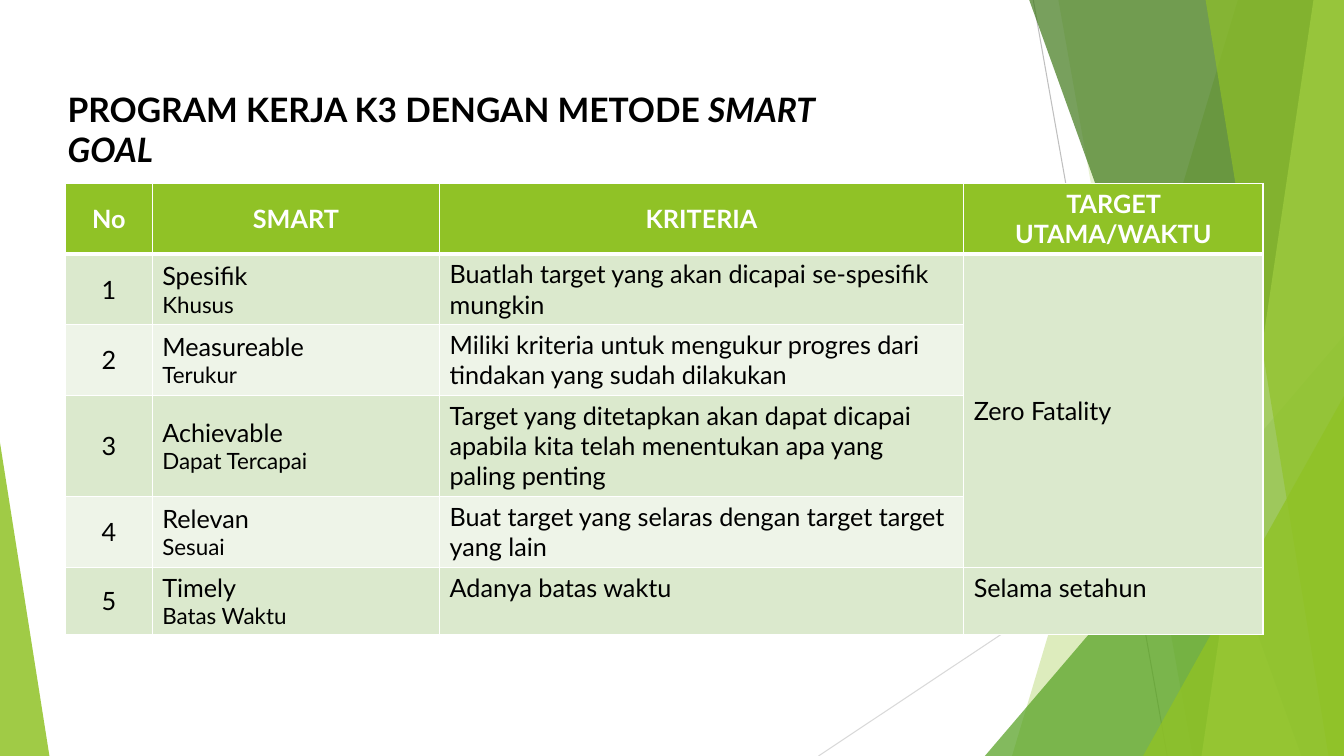
import dataclasses

import pptx
import pptx.dml.color
import pptx.enum.shapes
import pptx.enum.text
import pptx.oxml
import pptx.oxml.ns
import pptx.util

RGBColor = pptx.dml.color.RGBColor
Pt = pptx.util.Pt
SHAPE = pptx.enum.shapes.MSO_SHAPE
ALIGN = pptx.enum.text.PP_ALIGN
ANCHOR = pptx.enum.text.MSO_ANCHOR

LIME = RGBColor(0x90, 0xC2, 0x26)
GREEN = RGBColor(0x54, 0xA0, 0x21)
FOREST = RGBColor(0x3F, 0x78, 0x19)
PALE_LIME = RGBColor(0xC0, 0xE4, 0x74)
GREY = RGBColor(0xBF, 0xBF, 0xBF)
LIGHT_GREY = RGBColor(0xD9, 0xD9, 0xD9)
DARK_BAND = RGBColor(0xDB, 0xE9, 0xCD)
LIGHT_BAND = RGBColor(0xEE, 0xF4, 0xE8)
WHITE = RGBColor(0xFF, 0xFF, 0xFF)
BLACK = RGBColor(0, 0, 0)
FONT = "Lato"

HEADINGS = ["No", "SMART", "KRITERIA", "TARGET UTAMA/WAKTU"]
GOALS = [
    ("Spesifik", "Khusus", "Buatlah target yang akan dicapai se-spesifik mungkin"),
    ("Measureable", "Terukur",
     "Miliki kriteria untuk mengukur progres dari tindakan yang sudah dilakukan"),
    ("Achievable", "Dapat Tercapai",
     "Target yang ditetapkan akan dapat dicapai apabila kita telah menentukan "
     "apa yang paling penting"),
    ("Relevan", "Sesuai", "Buat target yang selaras dengan target target yang lain"),
    ("Timely", "Batas Waktu", "Adanya batas waktu"),
]
COLUMN_SHARES = [7.24, 23.99, 43.77, 25]
ROW_SHARES = [15.7, 15.7, 15.7, 22.3, 15.8, 14.8]


@dataclasses.dataclass
class Box:
    """A region whose inner lengths are percentages of its size."""
    left: int
    top: int
    width: int
    height: int

    def point(self, x, y):
        return (self.left + round(self.width * x / 100),
                self.top + round(self.height * y / 100))

    def region(self, x, y, width, height):
        left, top = self.point(x, y)
        right, bottom = self.point(x + width, y + height)
        return Box(left, top, right - left, bottom - top)

    def frame(self):
        return self.left, self.top, self.width, self.height


def paint(shape, color, opacity):
    shape.shadow.inherit = False
    shape.line.fill.background()
    shape.fill.solid()
    shape.fill.fore_color.rgb = color
    tint = shape.element.xpath("./p:spPr/a:solidFill/a:srgbClr")[0]
    alpha = pptx.oxml.parse_xml(
        f'<a:alpha {pptx.oxml.ns.nsdecls("a")} val="{opacity * 1000}"/>')
    tint.append(alpha)


def add_hairline(page, box, start, end, color):
    line = page.shapes.add_connector(
        pptx.enum.shapes.MSO_CONNECTOR.STRAIGHT, *box.point(*start), *box.point(*end))
    line.line.color.rgb = color
    line.line.width = Pt(0.75)
    line.element.spPr.append(
        pptx.oxml.parse_xml(f'<a:effectLst {pptx.oxml.ns.nsdecls("a")}/>'))


def add_facet(page, box, top_x, bottom_x, color, opacity):
    """Fill the area between a slanted edge and the right side of the box."""
    builder = page.shapes.build_freeform(*box.point(top_x, 0))
    builder.add_line_segments(
        [box.point(100, 0), box.point(100, 100), box.point(bottom_x, 100)], close=True)
    paint(builder.convert_to_shape(), color, opacity)


def add_corner(page, box, apex, color, opacity):
    """Fill a right triangle whose apex is at the left (0) or right (1)."""
    corner = page.shapes.add_shape(SHAPE.ISOSCELES_TRIANGLE, *box.frame())
    corner.adjustments[0] = apex
    paint(corner, color, opacity)


def add_backdrop(page, box):
    add_hairline(page, box, (76.88, 0), (86.85, 100), GREY)
    add_hairline(page, box, (100, 53.73), (60.9, 100), LIGHT_GREY)
    add_facet(page, box, 92.1, 75.3, LIME, 30)
    add_facet(page, box, 78.75, 88.73, LIME, 20)
    add_corner(page, box.region(73.28, 44.4, 26.72, 55.6), 1, GREEN, 72)
    add_facet(page, box, 76.58, 96.83, FOREST, 70)
    add_facet(page, box, 97.73, 89.4, PALE_LIME, 70)
    add_facet(page, box, 89.7, 98.85, LIME, 65)
    add_corner(page, box.region(85.05, 52.4, 14.95, 47.6), 1, LIME, 80)
    add_corner(page, box.region(0, 58.53, 3.68, 41.47), 0, LIME, 85)


def style_font(font, size, color, bold):
    font.name = FONT
    font.size = Pt(size)
    font.color.rgb = color
    font.bold = bold


def fill_title(page, box):
    title = page.shapes.title
    title.left, title.top, title.width, title.height = box.frame()
    frame = title.text_frame
    frame.word_wrap = True
    frame.auto_size = pptx.enum.text.MSO_AUTO_SIZE.NONE
    frame.vertical_anchor = ANCHOR.TOP
    para = frame.paragraphs[0]
    para.alignment = ALIGN.LEFT
    style_font(para.font, 24, BLACK, True)
    para.add_run().text = "PROGRAM KERJA K3 DENGAN METODE "
    span = para.add_run()
    span.text = "SMART GOAL"
    span.font.italic = True


def set_borders(cell, bottom_width):
    properties = cell._tc.get_or_add_tcPr()
    widths = {"lnL": 1, "lnR": 1, "lnT": 1, "lnB": bottom_width}
    for index, (side, width) in enumerate(widths.items()):
        properties.insert(index, pptx.oxml.parse_xml(
            f'<a:{side} {pptx.oxml.ns.nsdecls("a")} w="{Pt(width)}">'
            f'<a:solidFill><a:srgbClr val="{WHITE}"/></a:solidFill></a:{side}>'))


def fill_cell(cell, text, fill, centred=False, middle=True, header=False):
    """Write one line, or a term with its smaller translation below it."""
    cell.fill.solid()
    cell.fill.fore_color.rgb = fill
    set_borders(cell, 3 if header else 1)
    cell.vertical_anchor = ANCHOR.MIDDLE if middle else ANCHOR.TOP
    cell.text_frame.text = text
    for para, size in zip(cell.text_frame.paragraphs, (18, 16)):
        para.alignment = ALIGN.CENTER if centred else ALIGN.LEFT
        style_font(para.font, size, WHITE if header else BLACK, header)


def add_goal_table(page, box):
    table = page.shapes.add_table(
        len(GOALS) + 1, len(HEADINGS), *box.frame()).table
    for column, share in zip(table.columns, COLUMN_SHARES):
        column.width = round(box.width * share / 100)
    for row, share in zip(table.rows, ROW_SHARES):
        row.height = round(box.height * share / 100)
    for index, heading in enumerate(HEADINGS):
        fill_cell(table.cell(0, index), heading, LIME, centred=True, header=True)
    for number, (term, meaning, criterion) in enumerate(GOALS, 1):
        band = DARK_BAND if number % 2 else LIGHT_BAND
        fill_cell(table.cell(number, 0), str(number), band, centred=True)
        fill_cell(table.cell(number, 1), f"{term}\n{meaning}", band)
        fill_cell(table.cell(number, 2), criterion, band, middle=False)
    last = len(GOALS)
    table.cell(1, 3).merge(table.cell(last - 1, 3))
    fill_cell(table.cell(1, 3), "Zero Fatality", DARK_BAND)
    fill_cell(table.cell(last, 3), "Selama setahun", DARK_BAND, middle=False)


def main():
    deck = pptx.Presentation()
    deck.slide_width = pptx.util.Inches(13.33)
    deck.slide_height = pptx.util.Inches(7.5)
    page = deck.slides.add_slide(deck.slide_layouts.get_by_name("Title Only"))
    canvas = Box(0, 0, deck.slide_width, deck.slide_height)
    add_backdrop(page, canvas)
    add_goal_table(page, canvas.region(4.88, 24.27, 89.1, 59.5))
    fill_title(page, canvas.region(4.28, 11.07, 61.5, 6.67))
    deck.save("out.pptx")


if __name__ == "__main__":
    main()
